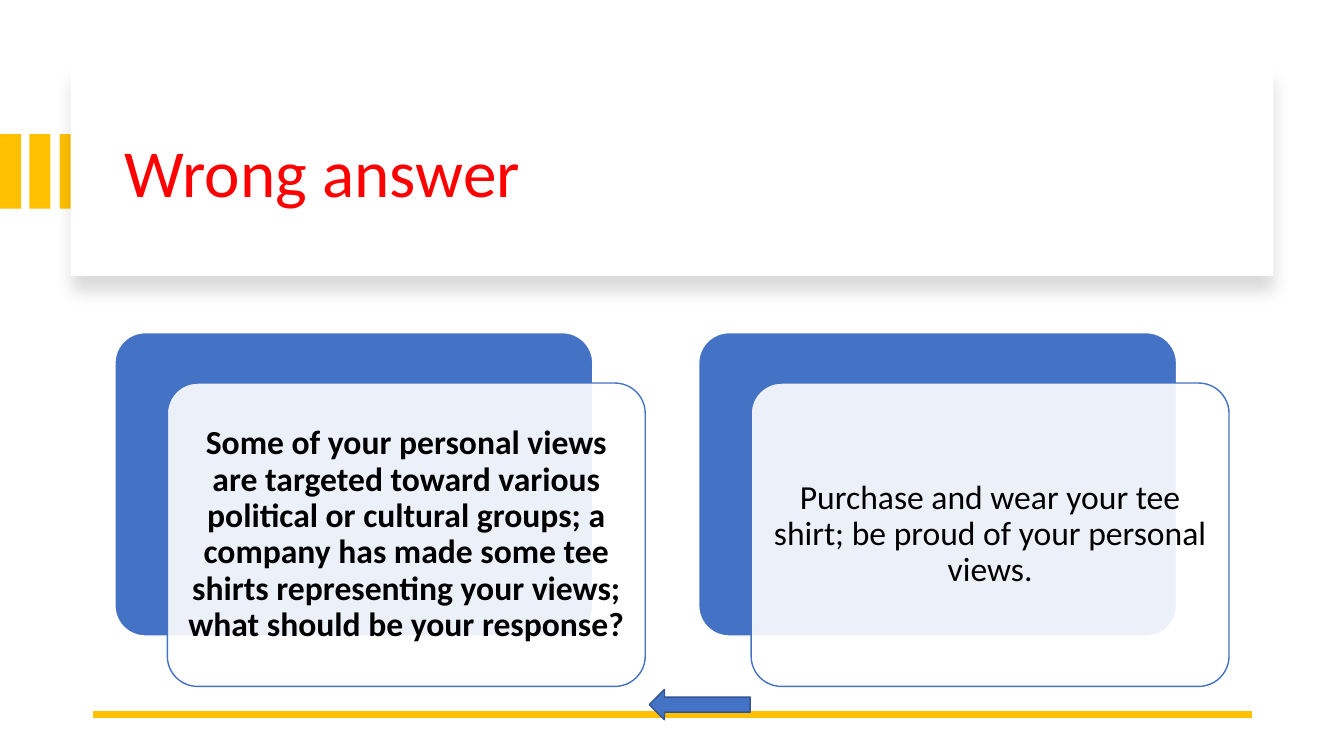
"""Build the "Wrong answer" slide with its two layered answer cards."""
from lxml.etree import SubElement
from pptx import Presentation
from pptx.dml.color import RGBColor
from pptx.enum.shapes import MSO_CONNECTOR, MSO_SHAPE
from pptx.enum.text import MSO_ANCHOR, PP_ALIGN
from pptx.oxml.ns import qn
from pptx.util import Pt

PX = 9144
COLORS = {"gold": "FFC000", "white": "FFFFFF", "blue": "4472C4",
          "edge": "325491", "red": "FF0000", "black": "000000"}
CARDS = [
    ("Some of your personal views are targeted toward various political or "
     "cultural groups; a company has made some tee shirts representing your "
     "views; what should be your response?", True),
    ("Purchase and wear your tee shirt; be proud of your personal views.", False),
]

deck = Presentation()
deck.slide_width, deck.slide_height = 1333 * PX, 750 * PX
page = deck.slides.add_slide(deck.slide_layouts[6])


def add_block(kind, left, top, width, height, fill, line=None):
    block = page.shapes.add_shape(kind, left * PX, top * PX, width * PX, height * PX)
    block.shadow.inherit = False
    block.fill.solid()
    block.fill.fore_color.rgb = RGBColor.from_string(COLORS[fill])
    if line:
        block.line.color.rgb = RGBColor.from_string(COLORS[line])
        block.line.width = Pt(1)
    else:
        block.line.fill.background()
    return block


def add_text(words, left, top, width, height, size, color, align, bold=False):
    box = page.shapes.add_textbox(left * PX, top * PX, width * PX, height * PX)
    frame = box.text_frame
    frame.word_wrap = True
    frame.vertical_anchor = MSO_ANCHOR.MIDDLE
    frame.margin_left = frame.margin_right = 10 * PX
    frame.margin_top = frame.margin_bottom = 10 * PX
    para = frame.paragraphs[0]
    para.alignment = align
    para.line_spacing = 0.9
    span = para.add_run()
    span.text = words
    span.font.name = "Calibri"
    span.font.size = Pt(size)
    span.font.bold = bold
    span.font.color.rgb = RGBColor.from_string(COLORS[color])


for left in (0, 29, 59):
    add_block(MSO_SHAPE.RECTANGLE, left, 133, 21, 74, "gold")

banner = add_block(MSO_SHAPE.RECTANGLE, 70, 67, 1193, 207, "white")
effects = banner._element.spPr.find(qn("a:effectLst"))
shadow = SubElement(effects, qn("a:outerShdw"), blurRad=str(Pt(11)),
                    dist=str(Pt(10)), dir="5400000", algn="t", rotWithShape="0")
shade = SubElement(shadow, qn("a:srgbClr"), val=COLORS["black"])
SubElement(shade, qn("a:alpha"), val="15000")
add_text("Wrong answer", 114, 89, 1113, 170, 48, "red", PP_ALIGN.LEFT)

rule = page.shapes.add_connector(MSO_CONNECTOR.STRAIGHT,
                                 1242 * PX, 709 * PX, 92 * PX, 709 * PX)
rule.line.color.rgb = RGBColor.from_string(COLORS["gold"])
rule.line.width = Pt(4.5)
SubElement(rule._element.spPr, qn("a:effectLst"))

for index, (words, bold) in enumerate(CARDS):
    left = 114 + 579 * index
    back = add_block(MSO_SHAPE.ROUNDED_RECTANGLE, left, 330, 474, 301, "blue", "white")
    front = add_block(MSO_SHAPE.ROUNDED_RECTANGLE, left + 52, 380, 474, 301, "white", "blue")
    back.adjustments[0] = front.adjustments[0] = 0.1
    tint = front._element.spPr.find(qn("a:solidFill")).find(qn("a:srgbClr"))
    SubElement(tint, qn("a:alpha"), val="90000")
    add_text(words, left + 61, 389, 456, 283, 24, "black", PP_ALIGN.CENTER, bold)

arrow = add_block(MSO_SHAPE.RIGHT_ARROW, 644, 684, 100, 30, "blue", "edge")
arrow.rotation = 180

deck.save("out.pptx")
